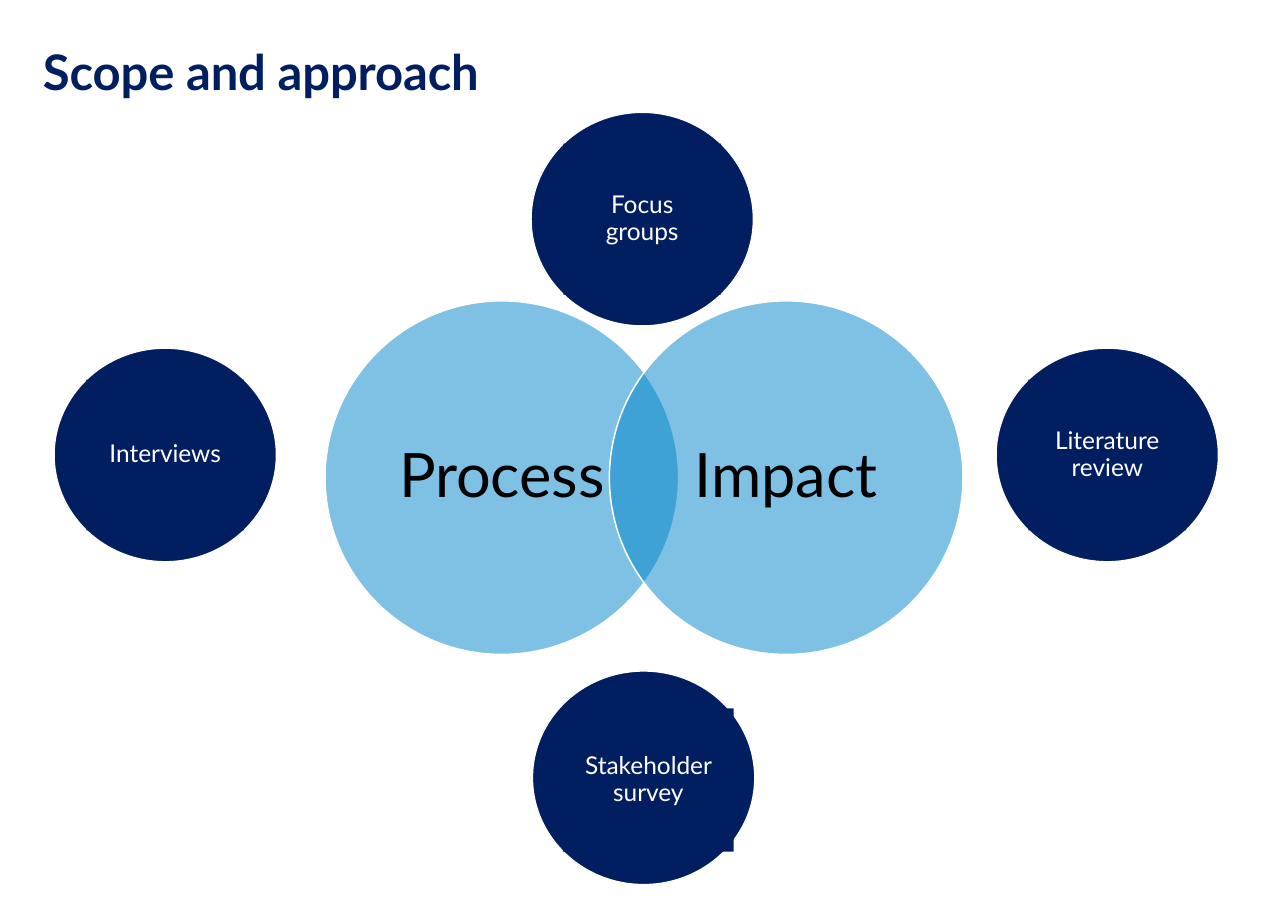
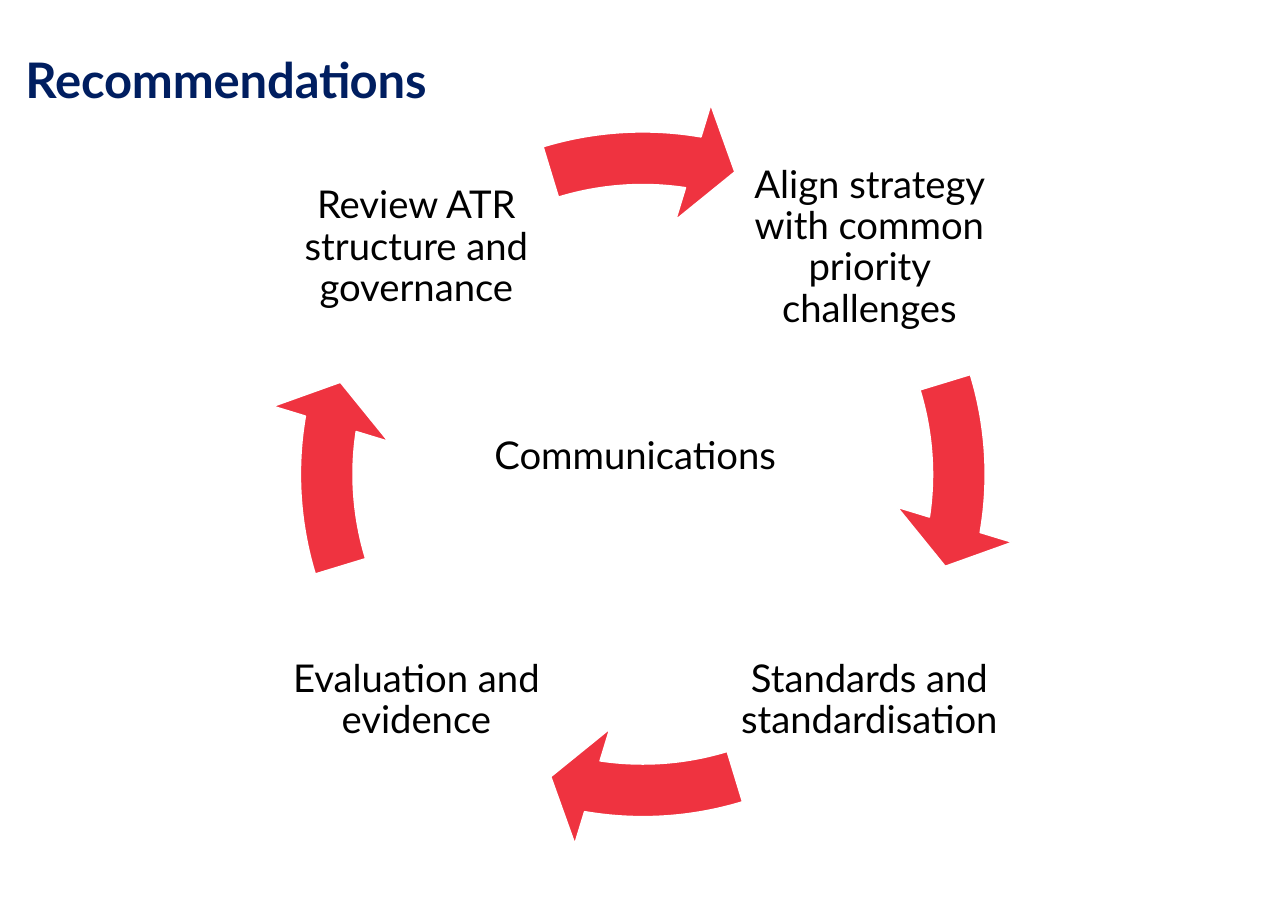
from lxml import etree
from pptx import Presentation
from pptx.dml.color import RGBColor
from pptx.enum.shapes import MSO_SHAPE
from pptx.enum.text import MSO_ANCHOR, MSO_AUTO_SIZE, PP_ALIGN
from pptx.oxml.ns import qn
from pptx.util import Pt

OVAL, RECTANGLE, ARC_ARROW = MSO_SHAPE.OVAL, MSO_SHAPE.RECTANGLE, MSO_SHAPE.CIRCULAR_ARROW
TOP, MIDDLE, BOTTOM = MSO_ANCHOR.TOP, MSO_ANCHOR.MIDDLE, MSO_ANCHOR.BOTTOM
LEFT, CENTER = PP_ALIGN.LEFT, PP_ALIGN.CENTER
NO_FIT, GROW = MSO_AUTO_SIZE.NONE, MSO_AUTO_SIZE.SHAPE_TO_FIT_TEXT

NAVY, BLUE, RED, BLACK, WHITE = "001E60", "0085CA", "EF3340", "000000", "FFFFFF"
FONT = "Lato"


def rgb(value):
    return RGBColor.from_string(value)


def write(frame, text, size=16, color=BLACK, bold=False, align=CENTER, anchor=MIDDLE,
          insets=(0, 0), spacing=0.9, tracking=None, fit=NO_FIT):
    frame.word_wrap = True
    frame.auto_size = fit
    frame.vertical_anchor = anchor
    frame.margin_left = frame.margin_right = Pt(insets[0])
    frame.margin_top = frame.margin_bottom = Pt(insets[1])
    paragraph = frame.paragraphs[0]
    paragraph.alignment = align
    paragraph.line_spacing = spacing
    run = paragraph.add_run()
    run.text = text
    run.font.name, run.font.size, run.font.bold = FONT, Pt(size), bold
    run.font.color.rgb = rgb(color)
    if tracking:
        run._r.get_or_add_rPr().set("spc", str(tracking))


class Deck:
    def __init__(self, width, height):
        self.file = Presentation()
        self.file.slide_width, self.file.slide_height = Pt(width), Pt(height)
        self.slide = None

    def new_slide(self, title, left, top):
        self.slide = self.file.slides.add_slide(self.file.slide_layouts[5])
        heading = self.slide.shapes.title
        heading.left, heading.top, heading.width, heading.height = map(Pt, (left, top, 768.24, 62.64))
        write(heading.text_frame, title, size=32, color=NAVY, bold=True, align=LEFT,
              anchor=BOTTOM, spacing=Pt(28), tracking=-10)

    def shape(self, kind, box, fill, opacity=100, outlined=True):
        shape = self.slide.shapes.add_shape(kind, *map(Pt, box))
        shape.shadow.inherit = False
        shape.fill.solid()
        shape.fill.fore_color.rgb = rgb(fill)
        if opacity < 100:
            color = shape._element.spPr.find(qn("a:solidFill"))[0]
            etree.SubElement(color, qn("a:alpha")).set("val", str(opacity * 1000))
        if outlined:
            shape.line.color.rgb = rgb(WHITE)
            shape.line.width = Pt(1)
        else:
            shape.line.fill.background()
        return shape

    def text(self, content, box, **style):
        label = self.slide.shapes.add_textbox(*map(Pt, box))
        write(label.text_frame, content, **style)

    def goal(self, name, left, top, size=231.1, inset=33.9):
        """Translucent circle with a large label."""
        self.shape(OVAL, (left, top, size, size), BLUE, opacity=50)
        inner = size - 2 * inset
        self.text(name, (left + inset, top + inset, inner, inner), size=40, insets=(13, 4.3))

    def method(self, name, left, top, plate=None):
        """Navy oval with its label on a plate, centred unless a box is given."""
        width, height, plate_width, plate_height = 145.4, 139.7, 103, 98.6
        self.shape(OVAL, (left, top, width, height), NAVY)
        plate = plate or (left + (width - plate_width) / 2, top + (height - plate_height) / 2,
                          plate_width, plate_height)
        label = self.shape(RECTANGLE, plate, NAVY, outlined=False)
        write(label.text_frame, name, color=WHITE, insets=(13, 4.3))

    def cycle_arrow(self, box, quarter):
        """Arc arrow turned by quarters; a quarter is 54 adjustment units of 216."""
        arrow = self.shape(ARC_ARROW, box, RED)
        turn = 54 * quarter
        for index, value in enumerate((0.07, 4.65, 5.51 + turn, (205.84 + turn) % 216, 0.08)):
            arrow.adjustments[index] = value


def scope_slide(deck):
    deck.new_slide("Scope and approach", 28.08, 2.88)
    # Overlapping goals
    for name, left in (("Process", 212.4), ("Impact", 398.2)):
        deck.goal(name, left, 196.6)
    # Methods around them
    deck.method("Interviews", 35.3, 227.5)
    deck.method("Stakeholder survey", 347.9, 438.5, plate=(367.9, 463, 111.6, 93.6))
    deck.method("Focus groups", 347, 73.4)
    deck.method("Literature review", 650.9, 227.5)


def recommendations_slide(deck):
    deck.new_slide("Recommendations", 16.56, 7.92)
    # Cycle, clockwise from the top arrow
    center_x, center_y, ring, label, offset = 420.1, 310, 491.8, 174.2, 148
    steps = (
        ("Align strategy with common priority challenges", 1, -1),
        ("Standards and standardisation", 1, 1),
        ("Evaluation and evidence", -1, 1),
        ("Review ATR structure and governance", -1, -1),
    )
    for quarter, (step, across, down) in enumerate(steps):
        deck.text(step, (center_x + across * offset - label / 2,
                         center_y + down * offset - label / 2, label, label),
                  size=25, insets=(2.2, 2.2))
        deck.cycle_arrow((center_x - ring / 2, center_y - ring / 2, ring, ring), quarter)
    # Shared theme in the middle
    deck.text("Communications", (316, 278.6, 210.2, 37.4), size=25, align=LEFT,
              anchor=TOP, insets=(7.2, 3.6), spacing=1.0, fit=GROW)


def main():
    deck = Deck(841.68, 594.72)
    scope_slide(deck)
    recommendations_slide(deck)
    deck.file.save("out.pptx")


if __name__ == "__main__":
    main()
